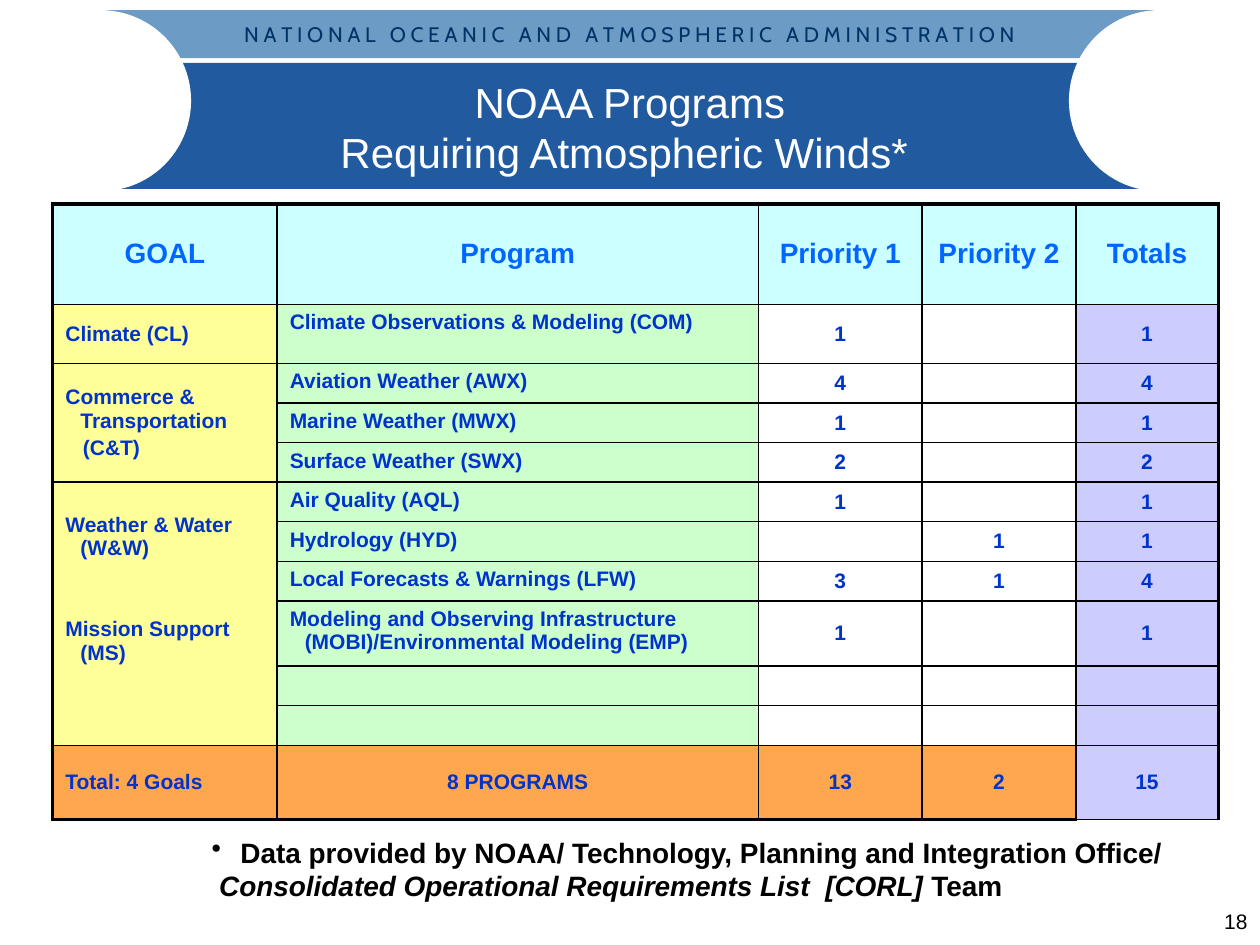
from lxml import etree
from pptx import Presentation
from pptx.dml.color import RGBColor
from pptx.enum.shapes import MSO_SHAPE
from pptx.enum.text import MSO_ANCHOR, PP_ALIGN
from pptx.oxml.ns import qn
from pptx.util import Pt

RECT, OVAL = MSO_SHAPE.RECTANGLE, MSO_SHAPE.OVAL
TOP, MIDDLE = MSO_ANCHOR.TOP, MSO_ANCHOR.MIDDLE
LEFT, CENTER, RIGHT = PP_ALIGN.LEFT, PP_ALIGN.CENTER, PP_ALIGN.RIGHT

AGENCY = "NATIONAL OCEANIC AND ATMOSPHERIC ADMINISTRATION"
COLS = [128.2, 275, 93.6, 87.8, 81.4]
LINE_ROW = 22.6
ROWS = [57.4, 33.8] + [LINE_ROW] * 6 + [37.4] + [LINE_ROW] * 2 + [42.3]
BODY_FILLS = ["FFFF99", "CCFFCC", "FFFFFF", "FFFFFF", "CCCCFF"]
HEAD_FILLS = ["CCFFFF"] * 5
TOTAL_FILLS = ["FFA74F"] * 4 + ["CCCCFF"]
HEAD_FONT = {"size": Pt(16), "bold": True, "name": "Arial"}
BODY_FONT = {"size": Pt(12), "bold": True, "name": "Arial"}
GOAL_SPANS = [(2, 4), (5, 10)]
DATA = [
    ["GOAL", "Program", "Priority 1", "Priority 2", "Totals"],
    ["Climate (CL)", "Climate Observations & Modeling (COM)", "1", "", "1"],
    ["Commerce & Transportation\n(C&T)", "Aviation Weather (AWX)", "4", "", "4"],
    ["", "Marine Weather (MWX)", "1", "", "1"],
    ["", "Surface Weather (SWX)", "2", "", "2"],
    ["Weather & Water (W&W)\nMission Support (MS)", "Air Quality (AQL)", "1", "", "1"],
    ["", "Hydrology (HYD)", "", "1", "1"],
    ["", "Local Forecasts & Warnings (LFW)", "3", "1", "4"],
    ["", "Modeling and Observing Infrastructure (MOBI)/Environmental Modeling (EMP)",
     "1", "", "1"],
    ["", "", "", "", ""],
    ["", "", "", "", ""],
    ["Total: 4 Goals", "8 PROGRAMS", "13", "2", "15"],
]


def rgb(value):
    """Turn a hex string into a colour."""
    return RGBColor.from_string(value)


def set_attrs(obj, values):
    """Set attributes of an object from a dict."""
    for name, value in values.items():
        setattr(obj, name, value)


def add_run(p, text, color, font):
    """Add a run with a colour and font values."""
    r = p.add_run()
    r.text = text
    r.font.color.rgb = rgb(color)
    set_attrs(r.font, font)


def indent(p, margin, first=0):
    """Set the left margin and first-line indent of a paragraph."""
    pPr = p._p.get_or_add_pPr()
    pPr.set("marL", str(Pt(margin)))
    pPr.set("indent", str(Pt(first)))
    return pPr


def add_plain(s, kind, box, color):
    """Add a flat filled shape without outline."""
    sp = s.shapes.add_shape(kind, *map(Pt, box))
    sp.shadow.inherit = False
    sp.fill.solid()
    sp.fill.fore_color.rgb = rgb(color)
    sp.line.fill.background()
    return sp


def add_label(s, box, lines, color, font, align, anchor=TOP):
    """Add a wrapping text box with a paragraph per line."""
    tf = s.shapes.add_textbox(*map(Pt, box)).text_frame
    set_attrs(tf, {"word_wrap": True, "vertical_anchor": anchor})
    for i, line in enumerate(lines):
        p = tf.add_paragraph() if i else tf.paragraphs[0]
        p.alignment = align
        add_run(p, line, color, font)


def add_banner(s, x, y, w, h):
    """Add the agency strip and title band with rounded-in ends."""
    strip = add_plain(s, RECT, (x + 55, y, w - 110, 27.4), "6C9BC6")
    tf = strip.text_frame
    set_attrs(tf, {"vertical_anchor": MIDDLE, "word_wrap": True})
    p = tf.paragraphs[0]
    p.alignment = CENTER
    add_run(p, " ".join(AGENCY), "003366", {"size": Pt(12), "name": "Cabin"})
    add_plain(s, RECT, (x + 55, y + 30.2, w - 104, h - 31.5), "215A9F")
    for left in (x, x + w - h):
        add_plain(s, OVAL, (left, y, h, h), "FFFFFF")
    add_label(s, (x + 102.3, y + 30.2, 504, 72.7),
              ["NOAA Programs", "Requiring Atmospheric Winds* "], "FFFFFF",
              {"size": Pt(24), "name": "Arial"}, CENTER, MIDDLE)


def set_borders(cell, widths):
    """Draw the left, right, top and bottom borders of a cell."""
    tcPr = cell._tc.get_or_add_tcPr()
    for side, width in zip("LRTB", widths):
        ln = etree.SubElement(tcPr, qn(f"a:ln{side}"), w=str(Pt(width)))
        fill = etree.SubElement(ln, qn("a:solidFill"))
        etree.SubElement(fill, qn("a:srgbClr"), val="000000")


def fill_cell(cell, text, fill, color, font, align, anchor):
    """Fill a cell and write its hanging paragraphs."""
    cell.fill.solid()
    cell.fill.fore_color.rgb = rgb(fill)
    cell.vertical_anchor = anchor
    for i, line in enumerate(text.split("\n")):
        p = cell.text_frame.add_paragraph() if i else cell.text_frame.paragraphs[0]
        p.alignment = align
        indent(p, 8.6, -8.6)
        if line:
            add_run(p, line, color, font)
        else:
            p._p.get_or_add_endParaRPr().set("sz", "1200")


def add_program_table(s, x, y):
    """Add the table of goals, programs and priorities."""
    tbl = s.shapes.add_table(len(ROWS), len(COLS), Pt(x), Pt(y),
                             Pt(sum(COLS)), Pt(sum(ROWS))).table
    set_attrs(tbl, {"first_row": False, "horz_banding": False})
    for col, width in zip(tbl.columns, COLS):
        col.width = Pt(width)
    for row, height in zip(tbl.rows, ROWS):
        row.height = Pt(height)
    last, right = len(ROWS) - 1, len(COLS) - 1
    fills = {0: HEAD_FILLS, last: TOTAL_FILLS}
    for i, values in enumerate(DATA):
        for j, text in enumerate(values):
            cell = tbl.cell(i, j)
            set_borders(cell, (2 if j == 0 else 1, 2 if j == right else 1,
                               2 if i == 0 else 1,
                               2 if i == last and j < right else 1))
            is_left = i > 0 and (j == 0 or j == 1 and i < last)
            fill_cell(cell, text, fills.get(i, BODY_FILLS)[j],
                      "0033CC" if i else "0066FF", BODY_FONT if i else HEAD_FONT,
                      LEFT if is_left else CENTER,
                      TOP if j == 1 and 0 < i < last else MIDDLE)
    for start, end in GOAL_SPANS:
        tbl.cell(start, 0).merge(tbl.cell(end, 0))
    commerce, weather = (tbl.cell(start, 0) for start, _ in GOAL_SPANS)
    code = commerce.text_frame.paragraphs[1]
    indent(code, 10)
    code.space_before = Pt(2.4)
    weather.text_frame.paragraphs[1].space_before = Pt(33)
    weather.margin_bottom = Pt(32)


def add_source_note(s, x, y, w, h):
    """Add the bulleted note on where the data come from."""
    tf = s.shapes.add_textbox(Pt(x), Pt(y), Pt(w), Pt(h)).text_frame
    tf.word_wrap = True
    p = tf.paragraphs[0]
    pPr = indent(p, 16.5, -16.5)
    etree.SubElement(pPr, qn("a:buChar"), char="•")
    add_run(p, "Data provided by NOAA/ Technology, Planning and Integration Office/",
            "000000", HEAD_FONT)
    p = tf.add_paragraph()
    indent(p, 4.4)
    add_run(p, "Consolidated Operational Requirements List  [CORL]", "000000",
            {**HEAD_FONT, "italic": True})
    add_run(p, " Team", "000000", HEAD_FONT)


def main():
    """Build the slide and save it."""
    prs = Presentation()
    set_attrs(prs, {"slide_width": Pt(720), "slide_height": Pt(540)})
    s = prs.slides.add_slide(prs.slide_layouts[6])
    add_banner(s, 5.7, 5.8, 708.6, 103.5)
    add_label(s, (672.5, 515.5, 47.5, 24.5), ["18"], "000000",
              {"size": Pt(12), "name": "Arial"}, RIGHT)
    add_source_note(s, 113.8, 473.8, 576, 46)
    add_program_table(s, 30.2, 116.6)
    prs.save("out.pptx")


if __name__ == "__main__":
    main()
